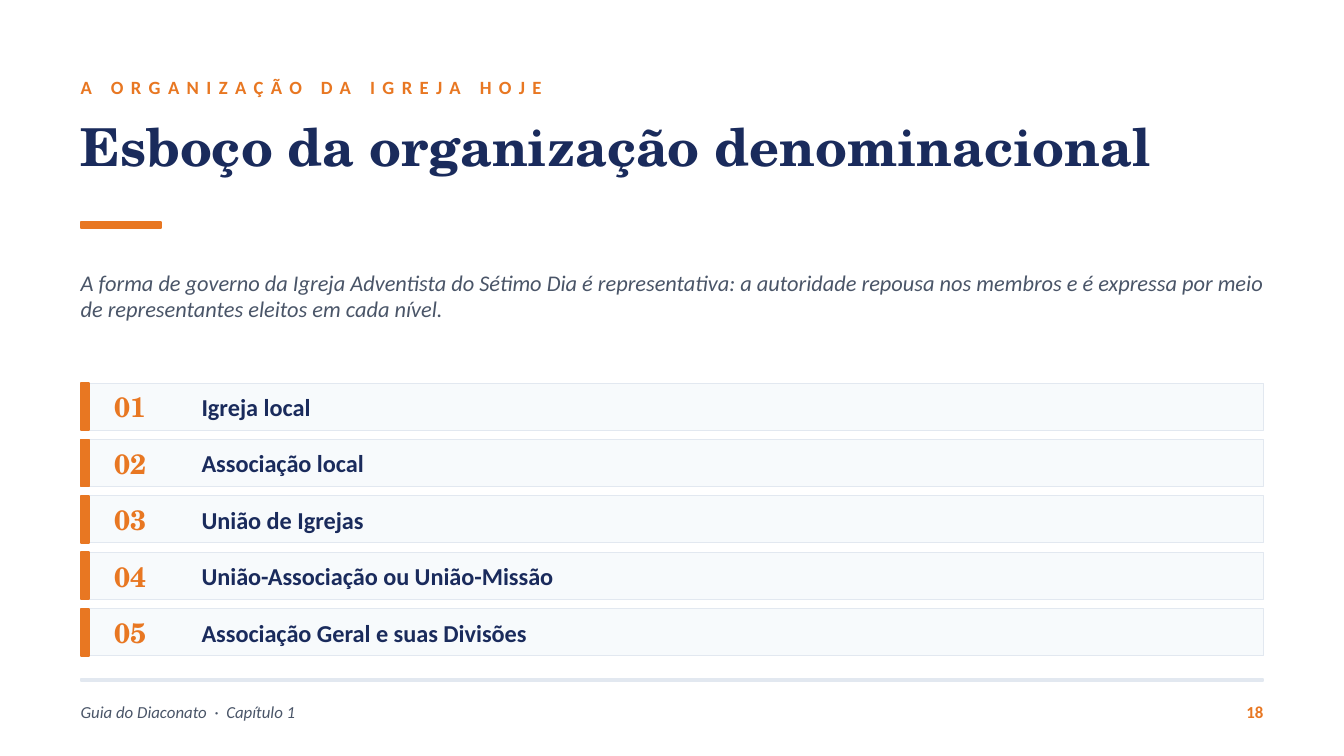
from pptx import Presentation
from pptx.dml.color import RGBColor
from pptx.enum.shapes import MSO_SHAPE
from pptx.enum.text import MSO_ANCHOR, PP_ALIGN
from pptx.util import Emu, Pt

RECTANGLE = MSO_SHAPE.RECTANGLE
TOP, MIDDLE = MSO_ANCHOR.TOP, MSO_ANCHOR.MIDDLE
LEFT, RIGHT = PP_ALIGN.LEFT, PP_ALIGN.RIGHT

EMU_PER_PX = 4572  # 200 px to the inch
PAGE_WIDTH, PAGE_HEIGHT = 2000, 1125
MARGIN = 120
CONTENT_WIDTH = PAGE_WIDTH - 2 * MARGIN

SANS, SERIF = "Calibri", "TeX Gyre Schola"
COLORS = {
    "page": "FFFFFF",
    "accent": "E87722",
    "navy": "1A2B5C",
    "muted": "4A5568",
    "row": "F7FAFC",
    "rule": "E2E8F0",
}

LEVELS = [
    "Igreja local",
    "Associação local",
    "União de Igrejas",
    "União-Associação ou União-Missão",
    "Associação Geral e suas Divisões",
]
ROW_TOP, ROW_HEIGHT, ROW_STEP = 570, 70, 84


def px(length):
    return Emu(length * EMU_PER_PX)


def color(name):
    return RGBColor.from_string(COLORS[name])


def add_bar(page, left, top, width, height, fill, line=None, line_width=1):
    bar = page.shapes.add_shape(RECTANGLE, px(left), px(top), px(width), px(height))
    bar.shadow.inherit = False
    bar.fill.solid()
    bar.fill.fore_color.rgb = color(fill)
    bar.line.color.rgb = color(line or fill)
    bar.line.width = Pt(line_width)


def add_text(page, left, top, width, height, text, size, ink, font=SANS,
             bold=False, italic=False, anchor=MIDDLE, align=LEFT, spacing=0):
    box = page.shapes.add_textbox(px(left), px(top), px(width), px(height))
    frame = box.text_frame
    frame.word_wrap = True
    frame.vertical_anchor = anchor
    frame.margin_left = frame.margin_right = 0
    frame.margin_top = frame.margin_bottom = 0
    para = frame.paragraphs[0]
    para.alignment = align
    span = para.add_run()
    span.text = text
    span.font.name = font
    span.font.size = Pt(size)
    span.font.bold = bold
    span.font.italic = italic
    span.font.color.rgb = color(ink)
    if spacing:
        # Letter spacing is held in hundredths of a point
        span.font._element.set("spc", str(spacing * 100))


def add_heading(page):
    add_text(page, MARGIN, 100, 1200, 60, "A ORGANIZAÇÃO DA IGREJA HOJE",
             10, "accent", bold=True, spacing=4)
    add_text(page, MARGIN, 170, 1800, 140, "Esboço da organização denominacional",
             28, "navy", font=SERIF, bold=True, anchor=TOP)
    add_bar(page, MARGIN, 330, 120, 10, "accent")
    add_text(page, MARGIN, 400, 1800, 140,
             "A forma de governo da Igreja Adventista do Sétimo Dia é representativa: "
             "a autoridade repousa nos membros e é expressa por meio de "
             "representantes eleitos em cada nível.",
             12, "muted", italic=True, anchor=TOP)


def add_level(page, number, name):
    top = ROW_TOP + (number - 1) * ROW_STEP
    add_bar(page, MARGIN, top, CONTENT_WIDTH, ROW_HEIGHT, "row", "rule", 0.5)
    add_bar(page, MARGIN, top, 12, ROW_HEIGHT, "accent")
    add_text(page, 170, top, 120, ROW_HEIGHT, f"{number:02d}",
             15, "accent", font=SERIF, bold=True)
    add_text(page, 300, top, 1560, ROW_HEIGHT, name, 13, "navy", bold=True)


def add_footer(page):
    add_bar(page, MARGIN, 1010, CONTENT_WIDTH, 4, "rule")
    add_text(page, MARGIN, 1030, 1200, 60, "Guia do Diaconato  ·  Capítulo 1",
             9, "muted", italic=True)
    add_text(page, 1780, 1030, 100, 60, "18", 9, "accent", bold=True, align=RIGHT)


def main():
    deck = Presentation()
    deck.slide_width, deck.slide_height = px(PAGE_WIDTH), px(PAGE_HEIGHT)
    page = deck.slides.add_slide(deck.slide_layouts[6])
    page.background.fill.solid()
    page.background.fill.fore_color.rgb = color("page")

    add_heading(page)
    for number, name in enumerate(LEVELS, start=1):
        add_level(page, number, name)
    add_footer(page)

    deck.save("out.pptx")


if __name__ == "__main__":
    main()
